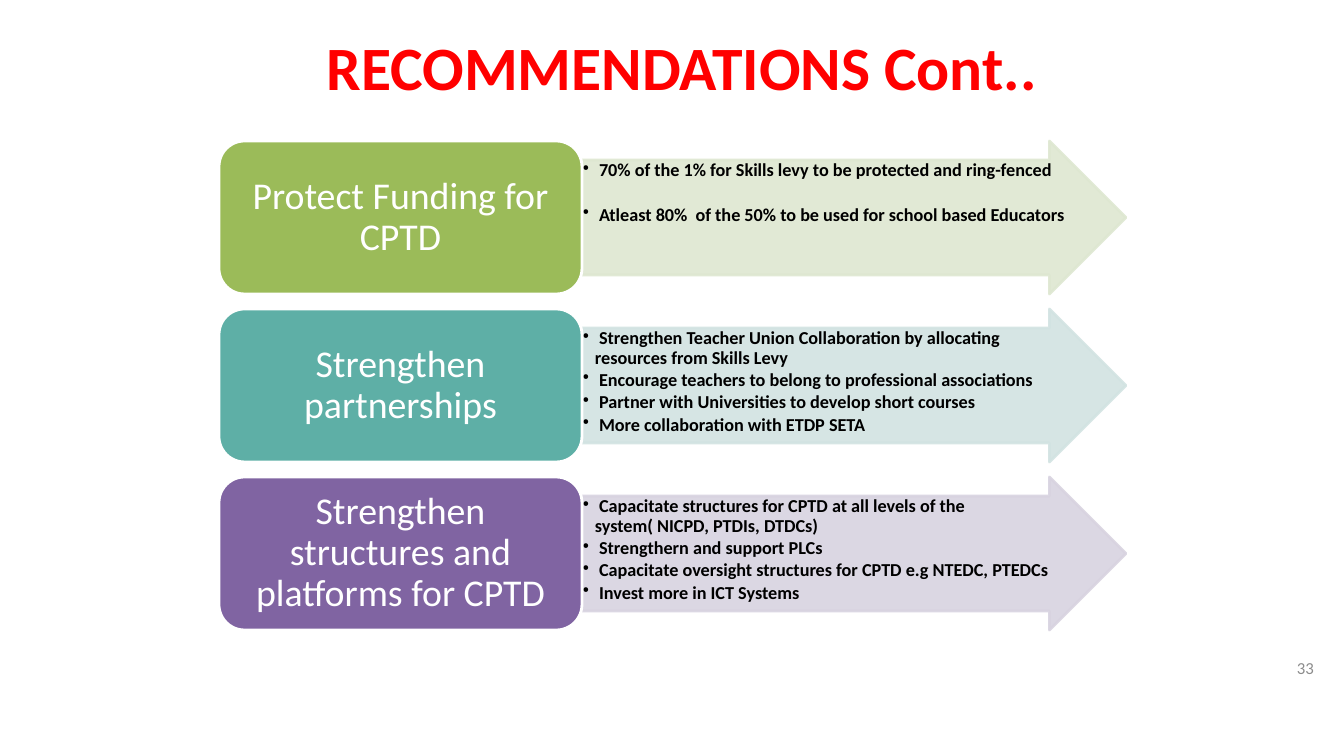
from lxml import etree
from pptx import Presentation
from pptx import util as u
from pptx.dml import color
from pptx.enum import shapes, text
from pptx.oxml import ns

PX = 914400 / 100.8
FONT = "Calibri"
CENTER, LEFT, RIGHT = text.PP_ALIGN.CENTER, text.PP_ALIGN.LEFT, text.PP_ALIGN.RIGHT
MIDDLE, TOP = text.MSO_ANCHOR.MIDDLE, text.MSO_ANCHOR.TOP


def px(n):
    return u.Emu(round(n * PX))


def rgb(value):
    return color.RGBColor.from_string(value)


def write(frame, lines, size, ink, bold=False, align=LEFT, anchor=MIDDLE,
          insets=(10, 5, 10, 5), spacing=1.0, after=0, between=0,
          left=0, bullet=None):
    """Fill a text frame with one paragraph per line."""
    frame.word_wrap = True
    frame.auto_size = text.MSO_AUTO_SIZE.NONE
    frame.vertical_anchor = anchor
    (frame.margin_left, frame.margin_top,
     frame.margin_right, frame.margin_bottom) = map(px, insets)
    for i, line in enumerate(lines):
        para = frame.paragraphs[0] if i == 0 else frame.add_paragraph()
        props = para._p.get_or_add_pPr()
        props.set("marL", str(px(left)))
        props.set("indent", str(px(-left) if bullet else 0))
        if bullet:
            etree.SubElement(props, ns.qn("a:buChar")).set("char", bullet)
        para.alignment = align
        para.line_spacing = spacing
        para.space_before = u.Pt(between if i else 0)
        para.space_after = u.Pt(after)
        run = para.add_run()
        run.text = line
        run.font.name, run.font.size, run.font.bold = FONT, u.Pt(size), bold
        run.font.color.rgb = rgb(ink)


class Board:
    """The current slide and its style."""

    def __init__(self):
        self.deck = Presentation()
        self.deck.slide_width, self.deck.slide_height = px(1344), px(756)
        self.slide = self.deck.slides.add_slide(self.deck.slide_layouts[5])

    def title(self, words, x, y, w, h):
        heading = self.slide.shapes.title
        heading.left, heading.top, heading.width, heading.height = map(px, (x, y, w, h))
        write(heading.text_frame, [words], 44, "FF0000", bold=True, align=CENTER,
              left=42, insets=(10, 11, 10, 5))

    def shape(self, kind, x, y, w, h, fill, line, opacity=100):
        shape = self.slide.shapes.add_shape(kind, *map(px, (x, y, w, h)))
        shape.shadow.inherit = False
        shape.fill.solid()
        shape.fill.fore_color.rgb = rgb(fill)
        shape.line.color.rgb = rgb(line)
        shape.line.width = u.Pt(2)
        if opacity < 100:
            for tint in shape._element.spPr.iter(ns.qn("a:srgbClr")):
                etree.SubElement(tint, ns.qn("a:alpha")).set("val", str(opacity * 1000))
        return shape

    def arrow(self, points, x, y, w, h, tint, between):
        arrow = self.shape(shapes.MSO_SHAPE.RIGHT_ARROW, x, y, w, h, tint, tint, 90)
        arrow.adjustments[0], arrow.adjustments[1] = 0.75, 0.5
        write(arrow.text_frame, points, 13, "000000", bold=True, anchor=TOP,
              insets=(1, 1, 1, 1), spacing=0.9, after=1.8, between=between,
              left=12, bullet="•")

    def label(self, words, x, y, w, h, fill):
        label = self.shape(shapes.MSO_SHAPE.ROUNDED_RECTANGLE, x, y, w, h, fill, "FFFFFF")
        write(label.text_frame, [words], 27, "FFFFFF", align=CENTER,
              insets=(11, 6, 11, 6), spacing=0.9)

    def number(self, words, x, y, w, h):
        box = self.slide.shapes.add_textbox(*map(px, (x, y, w, h)))
        write(box.text_frame, [words], 12, "8C8C8C", align=RIGHT)


# Label, label colour, arrow tint, gap between points (pt), points
RECOMMENDATIONS = [
    ("Protect Funding for CPTD", "9BBB59", "DEE7D1", 16, [
        " 70% of the 1% for Skills levy to be protected and ring-fenced",
        " Atleast 80%  of the 50% to be used for school based Educators"]),
    ("Strengthen partnerships", "5EAFA6", "D2E3E2", 0, [
        " Strengthen Teacher Union Collaboration by allocating resources from Skills Levy",
        " Encourage teachers to belong to professional associations",
        " Partner with Universities to develop short courses",
        " More collaboration with ETDP SETA"]),
    ("Strengthen structures and platforms for CPTD", "8064A2", "D8D3E0", 0, [
        " Capacitate structures for CPTD at all levels of the system( NICPD, PTDIs, DTDCs)",
        " Strengthern and support PLCs",
        " Capacitate oversight structures for CPTD e.g NTEDC, PTEDCs",
        " Invest more in ICT Systems"]),
]
ROW_TOP, ROW_PITCH, ROW_HEIGHT = 141, 168, 153
LABEL_LEFT, LABEL_WIDTH, ARROW_WIDTH = 219, 363, 544


def main():
    board = Board()
    board.title("RECOMMENDATIONS Cont..", 56, 0, 1210, 126)

    # One arrow and one label per recommendation
    for row, (theme, fill, tint, gap, points) in enumerate(RECOMMENDATIONS):
        y = ROW_TOP + row * ROW_PITCH
        board.arrow(points, LABEL_LEFT + LABEL_WIDTH, y, ARROW_WIDTH, ROW_HEIGHT, tint, gap)
        board.label(theme, LABEL_LEFT, y, LABEL_WIDTH, ROW_HEIGHT, fill)

    # Slide number
    board.number("33", 1011, 648, 313, 40)
    board.deck.save("out.pptx")


if __name__ == "__main__":
    main()
